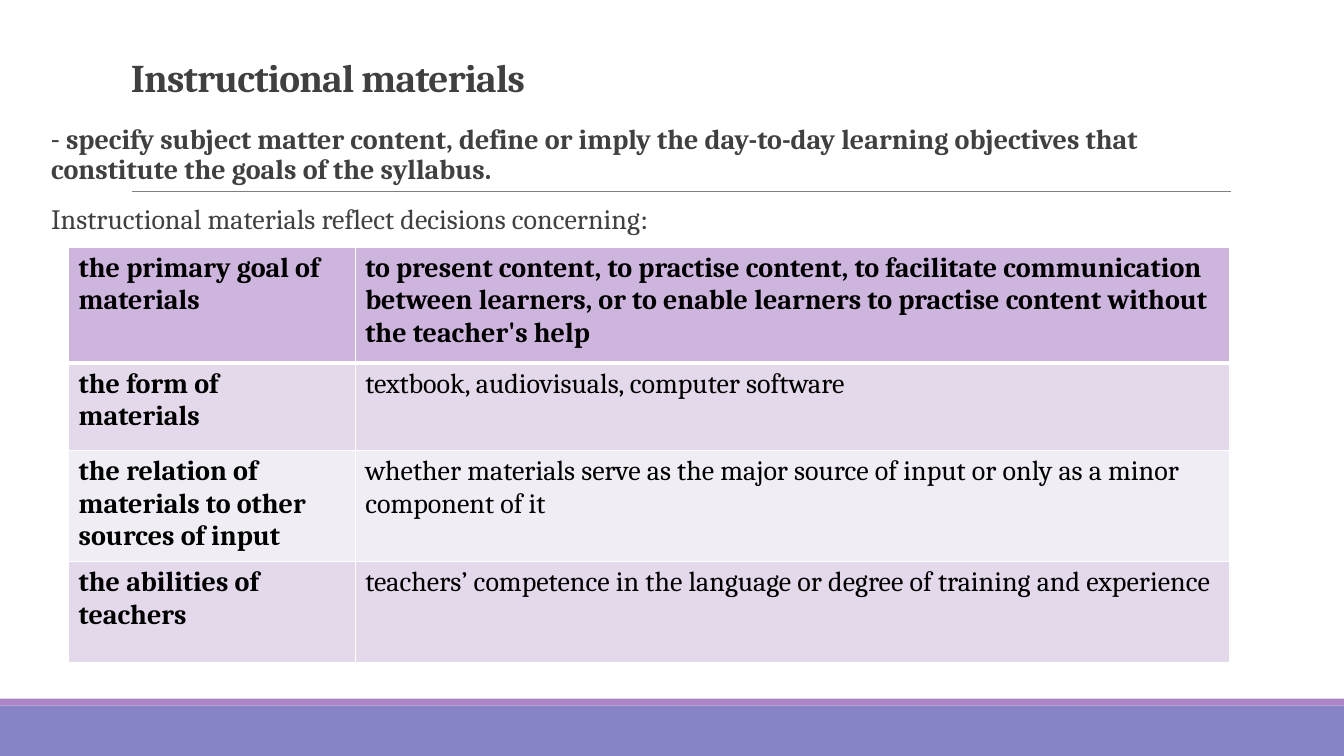
from typing import NamedTuple

from lxml import etree
from pptx import Presentation
from pptx.dml.color import RGBColor
from pptx.enum.shapes import MSO_CONNECTOR, MSO_SHAPE
from pptx.enum.text import MSO_ANCHOR
from pptx.oxml.ns import qn
from pptx.util import Pt

RECT = MSO_SHAPE.RECTANGLE
STRAIGHT = MSO_CONNECTOR.STRAIGHT
TOP, BOTTOM = MSO_ANCHOR.TOP, MSO_ANCHOR.BOTTOM

COLORS = {
    "band": "8784C7",
    "stripe": "AD84C6",
    "rule": "808080",
    "text": "404040",
    "cell_text": "000000",
    "border": "FFFFFF",
    "header": "CEB5DD",
    "odd": "E3D9EA",
    "even": "F1EDF5",
}
SLIDE_W, SLIDE_H = 960, 540


class Box(NamedTuple):
    left: float
    top: float
    width: float
    height: float


class Bar(NamedTuple):
    box: Box
    color: str


class Run(NamedTuple):
    text: str
    font: str = "Cambria"
    size: float = 20
    bold: bool = False
    color: str = "text"
    tracking: float = 0


class TextBlock(NamedTuple):
    box: Box
    paragraphs: list[list[Run]]
    frame_format: dict
    paragraph_format: dict
    indent: float = 0


class Row(NamedTuple):
    height: float
    fill: str
    aspect: str
    decision: str
    decision_bold: bool = False


BARS = [
    Bar(Box(0, 504, SLIDE_W, 36), "band"),
    Bar(Box(0, 499, SLIDE_W, 5), "stripe"),
]

TITLE = TextBlock(
    Box(86.4, 22.3, 792, 53.3),
    [[Run("Instructional materials", size=28, bold=True, tracking=-0.5)]],
    {"vertical_anchor": BOTTOM},
    {"line_spacing": 0.85},
)

BODY = TextBlock(
    Box(29.3, 85.7, 849, 420.5),
    [
        [
            Run("- ", font="Calibri"),
            Run("specify subject matter content, define or imply the day-to-day learning "
                "objectives that constitute the goals of the syllabus.", bold=True),
        ],
        [
            Run("Instructional materials reflect decisions concerning"),
            Run(":", font="Calibri"),
        ],
    ],
    {"vertical_anchor": TOP, "margin_left": 0, "margin_right": 0},
    {"line_spacing": 0.9, "space_before": Pt(12), "space_after": Pt(2)},
    indent=7.2,
)

TABLE_LEFT, TABLE_TOP = 49, 176.7
COLUMN_WIDTHS = [204.7, 624.3]
ROWS = [
    Row(82.5, "header", "the primary goal of materials",
        "to present content, to practise content, to facilitate communication between "
        "learners, or to enable learners to practise content without the teacher's help", True),
    Row(62.7, "odd", "the form of materials", "textbook, audiovisuals, computer software"),
    Row(77, "even", "the relation of materials to other sources of input",
        "whether materials serve as the major source of input or only as a minor "
        "component of it"),
    Row(72, "odd", "the abilities of teachers",
        "teachers’ competence in the language or degree of training and experience"),
]


def rgb(name: str) -> RGBColor:
    return RGBColor.from_string(COLORS[name])


def apply_format(target, values: dict) -> None:
    for name, value in values.items():
        setattr(target, name, value)


def add_run(p, run: Run) -> None:
    r = p.add_run()
    r.text = run.text
    apply_format(r.font, {"name": run.font, "size": Pt(run.size), "bold": run.bold})
    r.font.color.rgb = rgb(run.color)
    if run.tracking:
        r._r.get_or_add_rPr().set("spc", str(round(run.tracking * 100)))


def add_bar(s, bar: Bar) -> None:
    sp = s.shapes.add_shape(RECT, *map(Pt, bar.box))
    sp.shadow.inherit = False
    sp.fill.solid()
    sp.fill.fore_color.rgb = rgb(bar.color)
    sp.line.fill.background()


def add_rule(s) -> None:
    """Draw the thin horizontal line below the heading area."""
    line = s.shapes.add_connector(STRAIGHT, Pt(94.3), Pt(136.8), Pt(879), Pt(136.8))
    line.line.width = Pt(0.5)
    line.line.color.rgb = rgb("rule")
    etree.SubElement(line._element.spPr, qn("a:effectLst"))


def add_text(s, block: TextBlock) -> None:
    tf = s.shapes.add_textbox(*map(Pt, block.box)).text_frame
    apply_format(tf, {"word_wrap": True, **block.frame_format})
    for i, runs in enumerate(block.paragraphs):
        p = tf.add_paragraph() if i else tf.paragraphs[0]
        apply_format(p, block.paragraph_format)
        if block.indent:
            p._p.get_or_add_pPr().set("marL", str(Pt(block.indent)))
        for run in runs:
            add_run(p, run)


def set_borders(cell, top: float, bottom: float) -> None:
    tc_pr = cell._tc.get_or_add_tcPr()
    widths = {"a:lnL": 1, "a:lnR": 1, "a:lnT": top, "a:lnB": bottom}
    for i, (tag, width) in enumerate(widths.items()):
        ln = etree.Element(qn(tag), w=str(Pt(width)))
        fill = etree.SubElement(ln, qn("a:solidFill"))
        etree.SubElement(fill, qn("a:srgbClr"), val=COLORS["border"])
        tc_pr.insert(i, ln)


def add_decision_table(s) -> None:
    box = Box(TABLE_LEFT, TABLE_TOP, sum(COLUMN_WIDTHS), sum(row.height for row in ROWS))
    table = s.shapes.add_table(len(ROWS), len(COLUMN_WIDTHS), *map(Pt, box)).table
    for column, width in zip(table.columns, COLUMN_WIDTHS):
        column.width = Pt(width)
    for i, row in enumerate(ROWS):
        table.rows[i].height = Pt(row.height)
        texts = [(row.aspect, True), (row.decision, row.decision_bold)]
        for cell, (text, bold) in zip(table.rows[i].cells, texts):
            cell.fill.solid()
            cell.fill.fore_color.rgb = rgb(row.fill)
            set_borders(cell, top=3 if i == 1 else 1, bottom=3 if i == 0 else 1)
            add_run(cell.text_frame.paragraphs[0], Run(text, bold=bold, color="cell_text"))


def main() -> None:
    prs = Presentation()
    prs.slide_width, prs.slide_height = Pt(SLIDE_W), Pt(SLIDE_H)
    s = prs.slides.add_slide(prs.slide_layouts[6])
    for bar in BARS:
        add_bar(s, bar)
    add_rule(s)
    for block in (TITLE, BODY):
        add_text(s, block)
    add_decision_table(s)
    prs.save("out.pptx")


if __name__ == "__main__":
    main()
